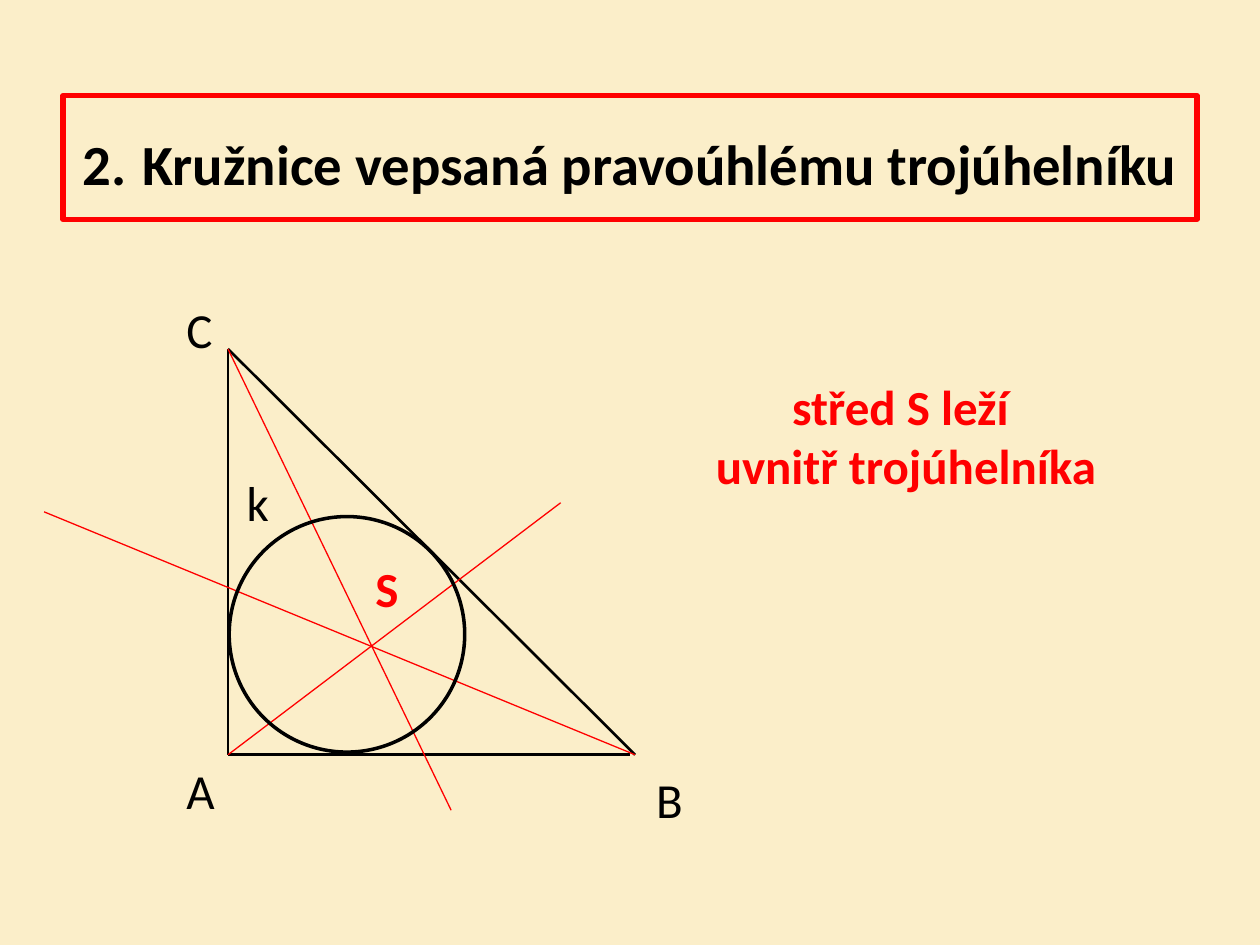
from lxml.etree import SubElement
from pptx import Presentation
from pptx.dml.color import RGBColor
from pptx.enum.shapes import MSO_CONNECTOR, MSO_SHAPE
from pptx.enum.text import MSO_ANCHOR, PP_ALIGN
from pptx.oxml.ns import qn
from pptx.util import Pt

COLORS = {"paper": "FBEEC9", "ink": "000000", "red": "FF0000"}
TITLE = [
    ("2.", {"size": Pt(32.4), "bold": True}),
    (" ", {"size": Pt(39.6), "bold": False}),
    ("Kružnice vepsaná pravoúhlému trojúhelníku", {"size": Pt(32.4), "bold": True}),
]
A, B, C = (130.3, 431.3), (362.9, 431.3), (130.3, 199.4)
SIDES = [(C, A), (A, (360, 431.3)), (C, B)]
RAYS = [(A, (320.4, 287.3)), ((25.2, 292.5), B), (C, (257.8, 463))]
CIRCLE = (131, 295.2, 134.6, 134.6)
LABELS = [
    ("S", (207.4, 315.4, 28, 41), "red", True, PP_ALIGN.LEFT),
    ("střed S leží \vuvnitř trojúhelníka", (400.3, 211.7, 234.7, 74.9),
     "red", True, PP_ALIGN.CENTER),
    ("A", (99.4, 431.3, 31, 41), "ink", False, PP_ALIGN.LEFT),
    ("B", (367.9, 436.3, 30.2, 41), "ink", False, PP_ALIGN.LEFT),
    ("C", (99.4, 167.8, 29.5, 41), "ink", False, PP_ALIGN.LEFT),
    ("k", (133.9, 266.4, 28, 41), "ink", False, PP_ALIGN.LEFT),
]


def color(name):
    return RGBColor.from_string(COLORS[name])


def style(font, tint, values):
    font.color.rgb = color(tint)
    for key, value in {"name": "Calibri", **values}.items():
        setattr(font, key, value)


def stroke(line, tint, width):
    line.color.rgb = color(tint)
    line.width = Pt(width)


def outline(slide, kind, box, tint, width):
    shape = slide.shapes.add_shape(kind, *map(Pt, box))
    shape.shadow.inherit = False
    shape.fill.background()
    stroke(shape.line, tint, width)
    return shape


def draw_lines(slide, pairs, tint, width):
    for start, end in pairs:
        line = slide.shapes.add_connector(
            MSO_CONNECTOR.STRAIGHT, *map(Pt, start + end))
        stroke(line.line, tint, width)
        SubElement(line._element.spPr, qn("a:effectLst"))


def add_title(slide):
    box = outline(slide, MSO_SHAPE.RECTANGLE, (36, 54.7, 648, 70.6), "red", 3)
    frame = box.text_frame
    frame.word_wrap = True
    frame.margin_left = frame.margin_right = 0
    frame.vertical_anchor = MSO_ANCHOR.MIDDLE
    para = frame.paragraphs[0]
    para.alignment = PP_ALIGN.CENTER
    for text, values in TITLE:
        run = para.add_run()
        run.text = text
        style(run.font, "ink", values)


def add_label(slide, text, box, tint, bold, align):
    frame = slide.shapes.add_textbox(*map(Pt, box)).text_frame
    frame.word_wrap = False
    para = frame.paragraphs[0]
    para.text = text
    para.alignment = align
    for run in para.runs:
        style(run.font, tint, {"size": Pt(28), "bold": bold})


def main():
    deck = Presentation()
    deck.slide_width, deck.slide_height = Pt(720), Pt(540)
    slide = deck.slides.add_slide(deck.slide_layouts[6])
    slide.background.fill.solid()
    slide.background.fill.fore_color.rgb = color("paper")
    add_title(slide)
    draw_lines(slide, SIDES, "ink", 1.5)
    draw_lines(slide, RAYS, "red", 0.75)
    for label in LABELS:
        add_label(slide, *label)
    outline(slide, MSO_SHAPE.OVAL, CIRCLE, "ink", 2)
    deck.save("out.pptx")


if __name__ == "__main__":
    main()
